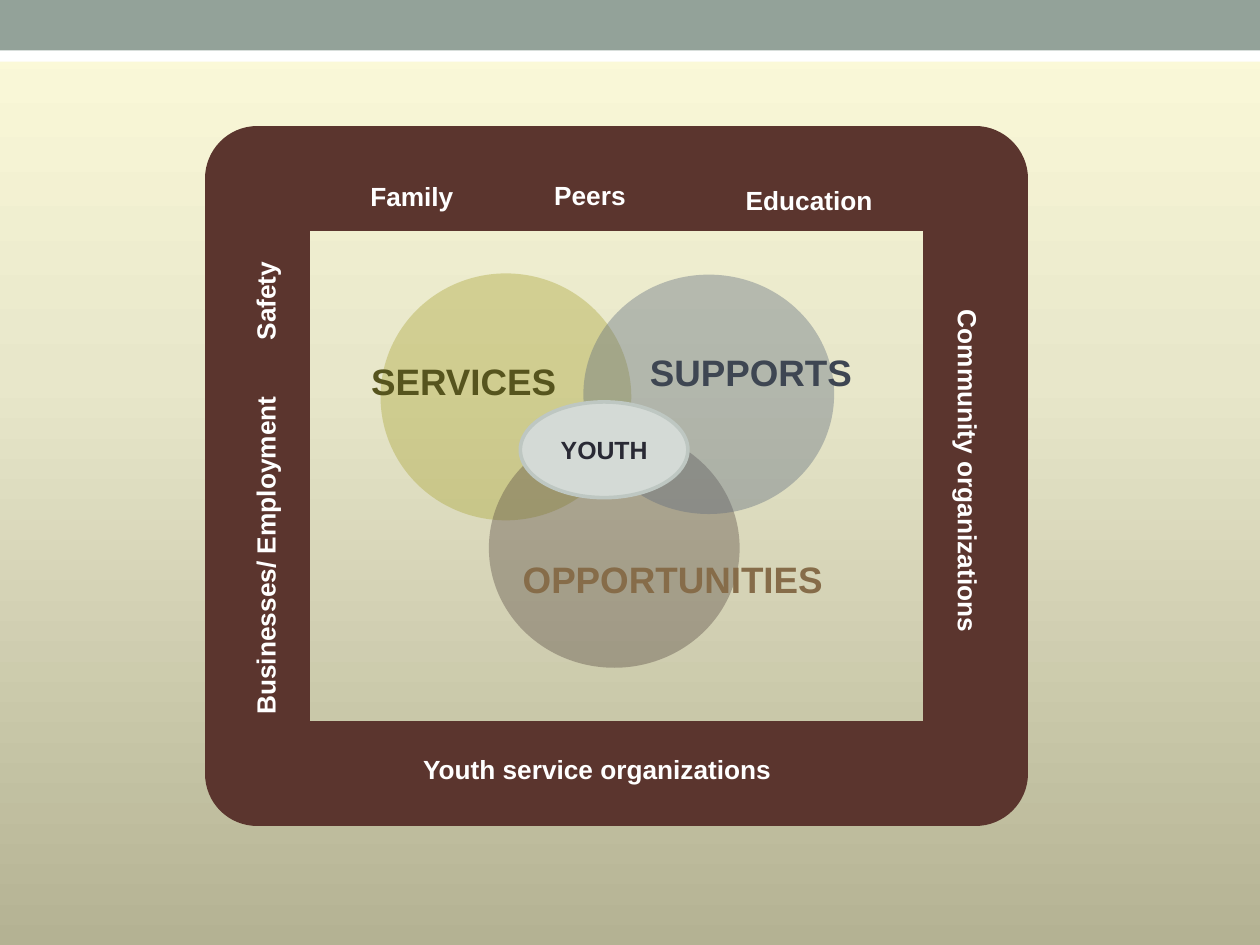
from copy import deepcopy

from lxml.etree import SubElement
from pptx import Presentation
from pptx.dml.color import RGBColor
from pptx.enum.shapes import MSO_SHAPE as Shape
from pptx.enum.text import MSO_ANCHOR as Anchor, PP_ALIGN as Align
from pptx.oxml.ns import qn
from pptx.util import Inches, Pt

WIDTH, HEIGHT = Inches(10), Inches(7.5)
COLUMNS, ROWS = 100, 75
COLORS = {
    "white": "FFFFFF", "band": "93A299", "frame": "5B352E",
    "services": "ACA73B", "supports": "5C697C", "opportunities": "564841",
    "services text": "56541E", "supports text": "3E4652",
    "opportunities text": "866C49",
    "youth": "D4DAD6", "youth edge": "BEC7C2", "youth text": "292934",
}
BACKGROUND = [(0, "FDFBDA"), (0.4, "E8E7CA"), (1, "B4B293")]
CIRCLES = [
    ("services", 40, (30.2, 21.7, 19.9, 19.6)),
    ("opportunities", 38, (38.8, 34, 19.9, 19)),
    ("supports", 38, (46.3, 21.8, 19.9, 19)),
]
CIRCLE_LABELS = [
    ("SERVICES", (28.4, 28, 16.8, 4.5), Align.CENTER),
    ("SUPPORTS", (50.5, 27.3, 18.2, 4.5), Align.CENTER),
    ("OPPORTUNITIES", (40.5, 43.7, 26.1, 4.5), Align.LEFT),
]
FRAME_LABELS = [
    ("Education", (58.2, 14.1, 15.6, 3.5), 0, True),
    ("Family", (28.4, 13.8, 13.1, 3.5), 0, True),
    ("Peers", (43, 13.7, 7.8, 3.5), 0, False),
    ("Safety", (16.9, 22.1, 8.3, 3.5), 270, False),
    ("Youth service organizations", (32.6, 59.3, 30.7, 3.5), 0, True),
    ("Community organizations", (59.8, 38.9, 34.1, 3.5), 90, True),
    ("Businesses/ Employment", (7.3, 42.2, 27.5, 3.5), 270, False),
]


def rgb(name):
    return RGBColor.from_string(COLORS[name])


def grid(box):
    column, row, columns, rows = box
    return (round(WIDTH * column / COLUMNS), round(HEIGHT * row / ROWS),
            round(WIDTH * columns / COLUMNS), round(HEIGHT * rows / ROWS))


def paint_background(slide):
    fill = slide.background.fill
    fill.gradient()
    fill.gradient_angle = 270
    first = fill._fill._gradFill.find(qn("a:gsLst"))[0]
    first.addnext(deepcopy(first))
    for stop, (position, color) in zip(fill.gradient_stops, BACKGROUND):
        stop.position = position
        stop.color.rgb = RGBColor.from_string(color)


def add_figure(shapes, kind, box, color=None, opacity=None, edge=None, weight=0):
    shape = shapes.add_shape(kind, *grid(box))
    shape.shadow.inherit = False
    if color:
        shape.fill.solid()
        shape.fill.fore_color.rgb = rgb(color)
    else:
        shape.fill.background()
    if opacity:
        tint = shape.fill._xPr.find(qn("a:solidFill"))[0]
        SubElement(tint, qn("a:alpha"), val=str(opacity * 1000))
    if edge:
        shape.line.color.rgb = rgb(edge)
        shape.line.width = Pt(weight)
        SubElement(shape.line._ln, qn("a:round"))
    else:
        shape.line.fill.background()
    return shape


def write(shape, text, size, color, align=Align.LEFT):
    shape.text_frame.text = text
    paragraph = shape.text_frame.paragraphs[0]
    paragraph.alignment = align
    font = paragraph.runs[0].font
    font.name, font.size, font.bold = "Arial", Pt(size), True
    font.color.rgb = rgb(color)


def add_label(shapes, text, box, size, color, align=Align.LEFT, rotation=0, wrap=False):
    label = shapes.add_textbox(*grid(box))
    label.rotation = rotation
    label.text_frame.word_wrap = wrap
    write(label, text, size, color, align)


def add_circles(slide):
    circles = slide.shapes.add_group_shape().shapes
    for color, opacity, box in CIRCLES:
        add_figure(circles, Shape.OVAL, box, color, opacity)
    for text, box, align in CIRCLE_LABELS:
        add_label(circles, text, box, 21, text.lower() + " text", align)


def add_frame(slide):
    add_figure(slide.shapes, Shape.RECTANGLE, (20.4, 14.2, 57, 47.2),
               edge="frame", weight=60)
    for text, box, rotation, wrap in FRAME_LABELS:
        add_label(slide.shapes, text, box, 15, "white", rotation=rotation, wrap=wrap)


def add_youth(slide):
    youth = add_figure(slide.shapes, Shape.OVAL, (41.3, 31.9, 13.3, 7.6),
                       "youth", edge="youth edge", weight=2.08)
    youth.text_frame.vertical_anchor = Anchor.MIDDLE
    write(youth, "YOUTH", 14.2, "youth text", Align.CENTER)


def main():
    presentation = Presentation()
    presentation.slide_width, presentation.slide_height = WIDTH, HEIGHT
    slide = presentation.slides.add_slide(presentation.slide_layouts[6])
    paint_background(slide)
    add_figure(slide.shapes, Shape.RECTANGLE, (0, 2.4, COLUMNS, 2.5), "white")
    add_figure(slide.shapes, Shape.RECTANGLE, (0, 0, COLUMNS, 4), "band")
    add_circles(slide)
    add_frame(slide)
    add_youth(slide)
    presentation.save("out.pptx")


if __name__ == "__main__":
    main()
